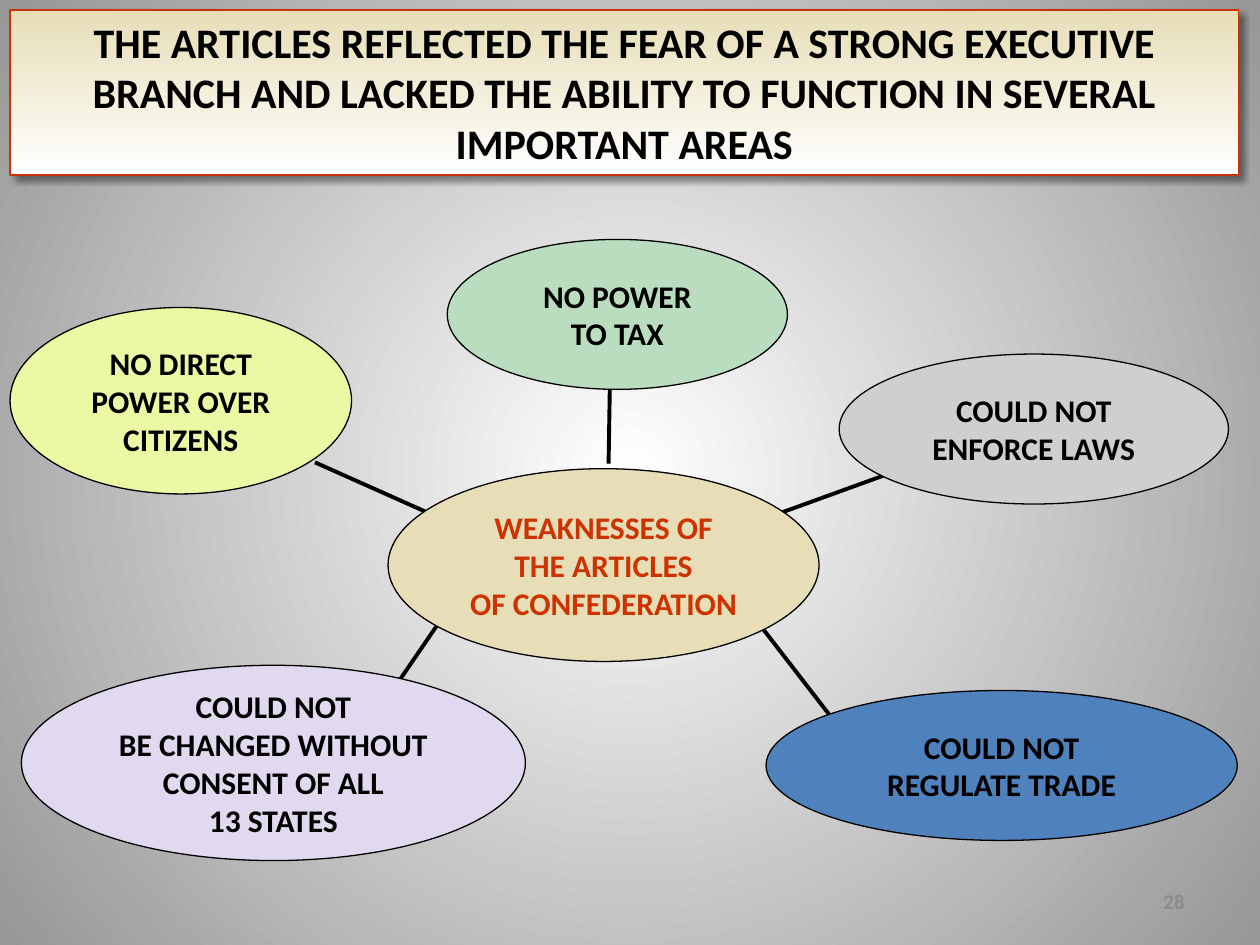
from pptx import Presentation
from pptx import util as u
from pptx.dml.color import RGBColor
from pptx.enum import shapes, text
from pptx.oxml import parse_xml
from pptx.oxml.ns import nsdecls, qn

BLACK = RGBColor(0, 0, 0)
WHITE = RGBColor(255, 255, 255)
EDGE_GRAY = RGBColor(0x97, 0x97, 0x97)
NUMBER_GRAY = RGBColor(0x8C, 0x8C, 0x8C)
RED = RGBColor(0xCC, 0x33, 0x00)
SAND = RGBColor(0xE7, 0xDE, 0xB7)
LIME = RGBColor(0xEA, 0xFA, 0xA4)
LILAC = RGBColor(0xE0, 0xD9, 0xEF)
BLUE = RGBColor(0x4F, 0x81, 0xBD)
SILVER = RGBColor(0xCE, 0xD0, 0xCE)
GREEN = RGBColor(0xB9, 0xDD, 0xBE)

TITLE = ("THE ARTICLES REFLECTED THE FEAR OF A STRONG EXECUTIVE BRANCH AND "
         "LACKED THE ABILITY TO FUNCTION IN SEVERAL IMPORTANT AREAS")
PAGE_NUMBER = "28"
HUB = (["WEAKNESSES OF", "THE ARTICLES", "OF CONFEDERATION"], (3.08, 3.72, 3.42, 1.53))
WEAKNESSES = [
    (["NO DIRECT", "POWER OVER", "CITIZENS"], LIME,
     (0.08, 2.44, 2.71, 1.48), (3.42, 4.08, 2.5, 3.67)),
    (["COULD NOT", "BE CHANGED WITHOUT", "CONSENT OF ALL", "13 STATES"], LILAC,
     (0.17, 5.28, 4, 1.55), (3.67, 4.67, 3.17, 5.4)),
    (["COULD NOT", "REGULATE TRADE"], BLUE,
     (6.08, 5.48, 3.74, 1.19), (6, 4.92, 6.58, 5.67)),
    (["COULD NOT", "ENFORCE LAWS"], SILVER,
     (6.66, 2.81, 3.09, 1.19), (6.17, 4.08, 7.08, 3.75)),
    (["NO POWER", "TO TAX"], GREEN,
     (3.55, 1.9, 2.7, 1.19), (4.83, 3.68, 4.84, 3.08)),
]


def inches(values):
    return [u.Inches(value) for value in values]


def write(shape, lines, size=18, color=BLACK, align=text.PP_ALIGN.CENTER,
          anchor=text.MSO_ANCHOR.MIDDLE, wrap=False):
    frame = shape.text_frame
    frame.word_wrap = wrap
    frame.vertical_anchor = anchor
    frame.text = "\n".join(lines)
    for paragraph in frame.paragraphs:
        paragraph.alignment = align
        font = paragraph.runs[0].font
        font.name, font.size, font.bold = "Calibri", u.Pt(size), True
        font.color.rgb = color


def fill_gradient(fill, colors):
    fill.gradient()
    for stop, color, position in zip(fill.gradient_stops, colors, (0, 1)):
        stop.color.rgb = color
        stop.position = position


def add_outlined(slide, kind, box, line_color):
    shape = slide.shapes.add_shape(kind, *inches(box))
    shape.shadow.inherit = False
    shape.line.color.rgb = line_color
    shape.line.width = u.Pt(0.75)
    return shape


def add_oval(slide, lines, fill_color, box, text_color=BLACK):
    oval = add_outlined(slide, shapes.MSO_SHAPE.OVAL, box, BLACK)
    oval.fill.solid()
    oval.fill.fore_color.rgb = fill_color
    write(oval, lines, color=text_color)


def add_spoke(slide, ends):
    spoke = slide.shapes.add_connector(shapes.MSO_CONNECTOR.STRAIGHT, *inches(ends))
    spoke.line.color.rgb = BLACK
    spoke.line.width = u.Pt(2.25)
    spoke._element.spPr.append(parse_xml(f"<a:effectLst {nsdecls('a')}/>"))


def paint_background(slide):
    fill_gradient(slide.background.fill, (WHITE, EDGE_GRAY))
    linear = slide.element.find(f".//{qn('a:lin')}")
    linear.getparent().replace(linear, parse_xml(
        f'<a:path {nsdecls("a")} path="circle">'
        '<a:fillToRect l="50000" t="50000" r="50000" b="50000"/></a:path>'))


def add_title(slide):
    title = add_outlined(slide, shapes.MSO_SHAPE.RECTANGLE, (0.08, 0.08, 9.75, 1.31), RED)
    fill_gradient(title.fill, (SAND, WHITE))
    title.fill.gradient_angle = 270
    title._element.spPr.find(qn("a:effectLst")).append(parse_xml(
        f'<a:outerShdw {nsdecls("a")} blurRad="{u.Pt(4)}" dist="{u.Pt(3)}" dir="2700000">'
        '<a:srgbClr val="000000"><a:alpha val="43000"/></a:srgbClr></a:outerShdw>'))
    write(title, [TITLE], size=24, anchor=text.MSO_ANCHOR.TOP, wrap=True)


def main():
    presentation = Presentation()
    presentation.slide_width, presentation.slide_height = inches((10, 7.5))
    slide = presentation.slides.add_slide(presentation.slide_layouts[6])
    paint_background(slide)
    number = slide.shapes.add_textbox(*inches((7.17, 6.95, 2.33, 0.4)))
    write(number, [PAGE_NUMBER], size=12, color=NUMBER_GRAY,
          align=text.PP_ALIGN.RIGHT, wrap=True)
    add_title(slide)
    for lines, color, box, spoke in WEAKNESSES:
        add_spoke(slide, spoke)
        add_oval(slide, lines, color, box)
    hub_lines, hub_box = HUB
    add_oval(slide, hub_lines, SAND, hub_box, text_color=RED)
    presentation.save("out.pptx")


if __name__ == "__main__":
    main()
